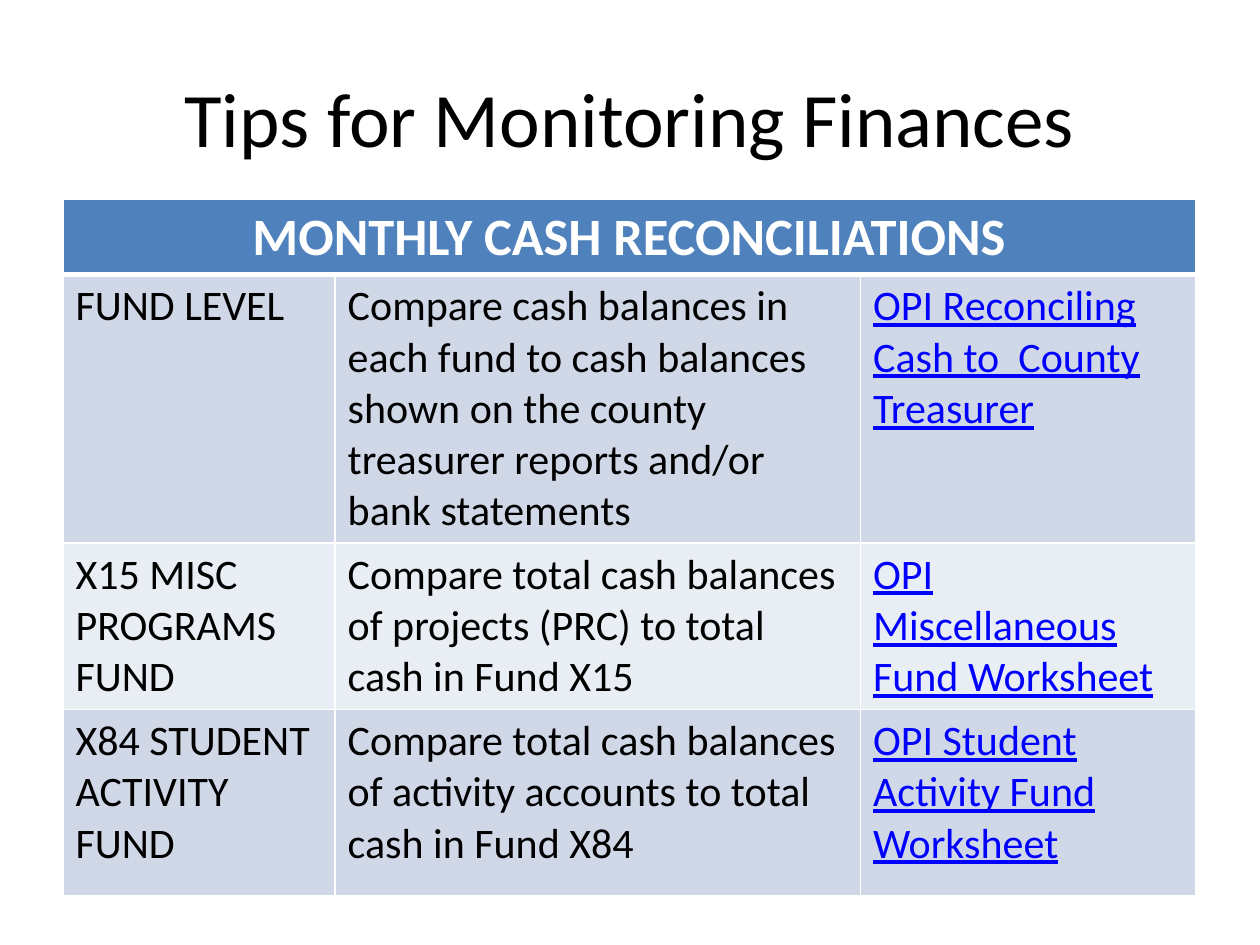
from lxml.etree import SubElement
from pptx import Presentation
from pptx.dml.color import RGBColor
from pptx.enum.text import MSO_ANCHOR, PP_ALIGN
from pptx.oxml.ns import qn
from pptx.util import Inches, Pt

COLORS = {
    "text": "000000", "link": "0000FF", "white": "FFFFFF",
    "header": "4F81BD", "band_dark": "D0D8E8", "band_light": "E9EDF4",
}
TITLE = "Tips for Monitoring Finances"
HEADER = "MONTHLY CASH RECONCILIATIONS"
ROWS = [
    ("FUND LEVEL",
     "Compare cash balances in each fund to cash balances shown on the county "
     "treasurer reports and/or bank statements",
     "OPI Reconciling Cash to  County Treasurer"),
    ("X15 MISC PROGRAMS FUND",
     "Compare total cash balances of projects (PRC) to total cash in Fund X15",
     "OPI Miscellaneous Fund Worksheet"),
    ("X84 STUDENT ACTIVITY FUND",
     "Compare total cash balances of activity accounts to total cash in Fund X84",
     "OPI Student Activity Fund Worksheet"),
]
COLUMN_WIDTHS = [2.16, 4.17, 2.66]
ROW_HEIGHTS = [0.6, 2.13, 1.32, 1.48]

TITLE_FORMAT = {"size": Pt(44), "name": "Calibri"}
HEADER_FORMAT = {"size": Pt(30), "name": "Calibri", "bold": True}
BODY_FORMAT = {"size": Pt(24), "name": "Calibri", "bold": False}
LINK_FORMAT = {**BODY_FORMAT, "underline": True}


def write(text_frame, text, color, font_format, alignment=PP_ALIGN.LEFT):
    paragraph = text_frame.paragraphs[0]
    paragraph.alignment = alignment
    run = paragraph.add_run()
    run.text = text
    for name, value in font_format.items():
        setattr(run.font, name, value)
    run.font.color.rgb = RGBColor.from_string(COLORS[color])
    return paragraph


def style_cell(cell, fill, top=1, bottom=1):
    """Add white borders, widths in points, and then the fill."""
    properties = cell._tc.get_or_add_tcPr()
    for side, width in {"L": 1, "R": 1, "T": top, "B": bottom}.items():
        line = SubElement(properties, qn(f"a:ln{side}"), w=str(Pt(width)))
        line_fill = SubElement(line, qn("a:solidFill"))
        SubElement(line_fill, qn("a:srgbClr"), val=COLORS["white"])
    cell.fill.solid()
    cell.fill.fore_color.rgb = RGBColor.from_string(COLORS[fill])


presentation = Presentation()
presentation.slide_width, presentation.slide_height = Inches(10), Inches(7.5)
slide = presentation.slides.add_slide(presentation.slide_layouts[6])

title = slide.shapes.add_textbox(Inches(0.5), Inches(0.3), Inches(9), Inches(1.25))
title.text_frame.word_wrap = True
title.text_frame.vertical_anchor = MSO_ANCHOR.MIDDLE
write(title.text_frame, TITLE, "text", TITLE_FORMAT, PP_ALIGN.CENTER)

table = slide.shapes.add_table(
    len(ROW_HEIGHTS), len(COLUMN_WIDTHS), Inches(0.5), Inches(1.58),
    Inches(sum(COLUMN_WIDTHS)), Inches(sum(ROW_HEIGHTS))).table
for column, width in zip(table.columns, COLUMN_WIDTHS):
    column.width = Inches(width)
for row, height in zip(table.rows, ROW_HEIGHTS):
    row.height = Inches(height)

for cell in table.rows[0].cells:
    style_cell(cell, "header", bottom=3)
header = table.cell(0, 0)
header.merge(table.cell(0, len(COLUMN_WIDTHS) - 1))
heading = write(header.text_frame, HEADER, "white", HEADER_FORMAT, PP_ALIGN.CENTER)
heading.space_before = Pt(3)

for row_number, texts in enumerate(ROWS, start=1):
    band = "band_dark" if row_number % 2 else "band_light"
    for column_number, text in enumerate(texts):
        cell = table.cell(row_number, column_number)
        style_cell(cell, band, top=3 if row_number == 1 else 1)
        is_link = column_number == len(texts) - 1
        write(cell.text_frame, text, "link" if is_link else "text",
              LINK_FORMAT if is_link else BODY_FORMAT)

presentation.save("out.pptx")
